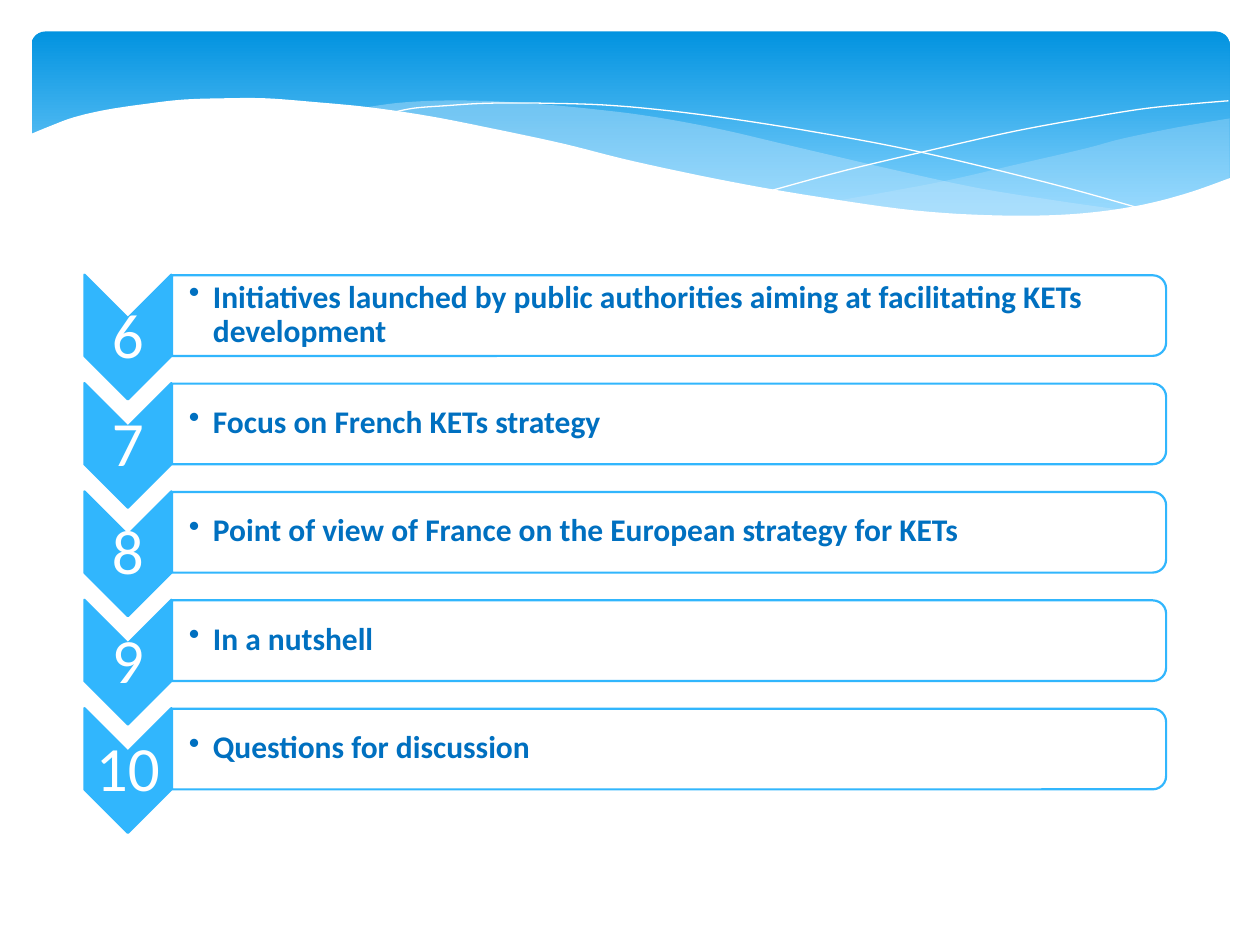
from dataclasses import dataclass
from typing import Any

from lxml.etree import SubElement
from pptx import Presentation
from pptx.dml.color import RGBColor
from pptx.enum.shapes import MSO_SHAPE
from pptx.enum.text import MSO_ANCHOR, PP_ALIGN
from pptx.oxml.ns import qn
from pptx.util import Pt

EMU_PER_PX = 9144
STEPS = 6
ROW_PITCH = 86
SKY = "31B6FD"
WHITE = "FFFFFF"
MIST = "C6E7FC"

Curve = list[tuple[int, int]]


@dataclass(frozen=True)
class Box:
    left: int
    top: int
    width: int
    height: int

    def down(self, distance: int) -> "Box":
        return Box(self.left, self.top + distance, self.width, self.height)

    def emu(self) -> list[int]:
        return [px(v) for v in (self.left, self.top, self.width, self.height)]


@dataclass(frozen=True)
class Wave:
    curves: list[Curve]
    color: str
    opacity: int = 100
    closed: bool = True


@dataclass(frozen=True)
class Topic:
    number: int
    label: str


@dataclass(frozen=True)
class TextStyle:
    frame: dict[str, Any]
    paragraph: dict[str, Any]
    font: dict[str, Any]
    color: str
    bullet: bool = False


BANNER = Box(25, 25, 951, 156)
CHEVRON = Box(52, 233, 99, 69)
NUMBER = Box(67, 253, 69, 30)
PANEL = Box(499, -144, 64, 789)
LABEL = Box(136, 221, 786, 58)

WAVES = [
    Wave([[(976, 94), (935, 101), (891, 110), (861, 118), (805, 131), (753, 143), (706, 152), (661, 160)],
          [(661, 160), (705, 165), (757, 170), (803, 172), (844, 171), (881, 167), (913, 162),
           (942, 154), (963, 147), (976, 141)]], MIST, 29),
    Wave([[(893, 167), (837, 159), (775, 149), (706, 134), (629, 116), (569, 102), (514, 92),
           (465, 86), (420, 82), (380, 80), (344, 80), (313, 82), (286, 86)],
          [(286, 86), (342, 94), (404, 106), (449, 116), (530, 135), (601, 150), (665, 161),
           (722, 168), (773, 172), (818, 173), (857, 171), (893, 167)]], MIST, 40),
    Wave([[(309, 90), (328, 86), (353, 84), (387, 82), (433, 82), (489, 84), (556, 91), (636, 103),
           (727, 120), (831, 145), (907, 166)]], WHITE, closed=False),
    Wave([[(613, 151), (672, 135), (748, 117), (806, 104), (866, 93), (910, 86), (951, 82), (975, 80)]],
         WHITE, closed=False),
    Wave([[(977, 141), (940, 154), (899, 164), (850, 170), (793, 171), (726, 167), (648, 156),
           (579, 144), (503, 128), (447, 114), (391, 102), (340, 92), (292, 85), (250, 81),
           (211, 78), (177, 78), (146, 79), (119, 82), (85, 87), (59, 93), (40, 100), (23, 107)],
          [(23, 224), (977, 224)]], WHITE),
]

TOPICS = [
    Topic(6, "Initiatives launched by public authorities aiming at facilitating KETs development"),
    Topic(7, "Focus on French KETs strategy"),
    Topic(8, "Point of view of France on the European strategy for KETs"),
    Topic(9, "In a nutshell"),
    Topic(10, "Questions for discussion"),
]


def px(value: float) -> int:
    return round(value * EMU_PER_PX)


def rgb(color: str) -> RGBColor:
    return RGBColor.from_string(color)


def apply_format(target: Any, values: dict[str, Any]) -> None:
    for name, value in values.items():
        setattr(target, name, value)


def margins(side: int, left: int) -> dict[str, int]:
    edges = dict.fromkeys(("margin_right", "margin_top", "margin_bottom"), px(side))
    return {"margin_left": px(left), **edges}


NUMBER_STYLE = TextStyle(
    {"word_wrap": True, "vertical_anchor": MSO_ANCHOR.MIDDLE, **margins(3, 3)},
    {"alignment": PP_ALIGN.CENTER, "line_spacing": 0.9},
    {"name": "Calibri", "size": Pt(36)},
    WHITE,
)
LABEL_STYLE = TextStyle(
    {"word_wrap": True, "vertical_anchor": MSO_ANCHOR.MIDDLE, **margins(1, 14)},
    {"alignment": PP_ALIGN.LEFT, "line_spacing": 0.9, "level": 1},
    {"name": "Calibri", "size": Pt(18), "bold": True},
    "0070C0",
    bullet=True,
)


def fill_solid(shape: Any, color: str, opacity: int = 100) -> None:
    shape.fill.solid()
    shape.fill.fore_color.rgb = rgb(color)
    if opacity < 100:
        tint = shape.fill._xPr.find(qn("a:solidFill"))[0]
        SubElement(tint, qn("a:alpha"), val=str(opacity * 1000))


def smooth(knots: Curve) -> list[tuple[float, float]]:
    if len(knots) < 3:
        return list(knots)
    padded = [knots[0], *knots, knots[-1]]
    points = [knots[0]]
    for a, b, c, d in zip(padded, padded[1:], padded[2:], padded[3:]):
        for step in range(1, STEPS + 1):
            t = step / STEPS
            points.append(tuple(
                (2 * q + (r - p) * t + (2 * p - 5 * q + 4 * r - s) * t**2
                 + (3 * q - p - 3 * r + s) * t**3) / 2
                for p, q, r, s in zip(a, b, c, d)))
    return points


def draw_wave(shapes: Any, wave: Wave) -> None:
    points = [(px(x), px(y)) for curve in wave.curves for x, y in smooth(curve)]
    builder = shapes.build_freeform(*points[0])
    builder.add_line_segments(points[1:], close=wave.closed)
    outline = builder.convert_to_shape()
    outline.shadow.inherit = False
    if wave.closed:
        fill_solid(outline, wave.color, wave.opacity)
        outline.line.fill.background()
    else:
        outline.fill.background()
        outline.line.color.rgb = rgb(wave.color)
        outline.line.width = Pt(0)


def draw_banner(shapes: Any) -> None:
    banner = shapes.add_shape(MSO_SHAPE.ROUNDED_RECTANGLE, *BANNER.emu())
    banner.adjustments[0] = 0.07
    banner.shadow.inherit = False
    banner.line.fill.background()
    banner.fill.gradient()
    banner.fill.gradient_angle = 270
    for stop, (position, color) in zip(banner.fill.gradient_stops, [(0, "0293E0"), (0.9, "83D3FE")]):
        stop.position = position
        stop.color.rgb = rgb(color)


def draw_turned(shapes: Any, preset: MSO_SHAPE, box: Box, color: str, opacity: int = 100) -> None:
    turned = shapes.add_shape(preset, *box.emu())
    turned.rotation = 90
    turned.shadow.inherit = False
    fill_solid(turned, color, opacity)
    turned.line.color.rgb = rgb(SKY)
    turned.line.width = Pt(1.25)


def draw_text(shapes: Any, box: Box, text: str, style: TextStyle) -> None:
    frame = shapes.add_textbox(*box.emu()).text_frame
    apply_format(frame, style.frame)
    paragraph = frame.paragraphs[0]
    if style.bullet:
        properties = paragraph._p.get_or_add_pPr()
        properties.set("marL", str(px(19)))
        properties.set("indent", str(px(-19)))
        SubElement(properties, qn("a:buChar"), char="•")
    apply_format(paragraph, style.paragraph)
    run = paragraph.add_run()
    run.text = text
    apply_format(run.font, style.font)
    run.font.color.rgb = rgb(style.color)


def draw_topic(shapes: Any, topic: Topic, offset: int) -> None:
    draw_turned(shapes, MSO_SHAPE.CHEVRON, CHEVRON.down(offset), SKY)
    draw_text(shapes, NUMBER.down(offset), str(topic.number), NUMBER_STYLE)
    draw_turned(shapes, MSO_SHAPE.ROUND_2_SAME_RECTANGLE, PANEL.down(offset), WHITE, 90)
    draw_text(shapes, LABEL.down(offset), topic.label, LABEL_STYLE)


def main() -> None:
    deck = Presentation()
    deck.slide_width, deck.slide_height = px(1000), px(750)
    shapes = deck.slides.add_slide(deck.slide_layouts[6]).shapes
    draw_banner(shapes)
    for wave in WAVES:
        draw_wave(shapes, wave)
    for row, topic in enumerate(TOPICS):
        draw_topic(shapes, topic, row * ROW_PITCH)
    deck.save("out.pptx")


if __name__ == "__main__":
    main()
